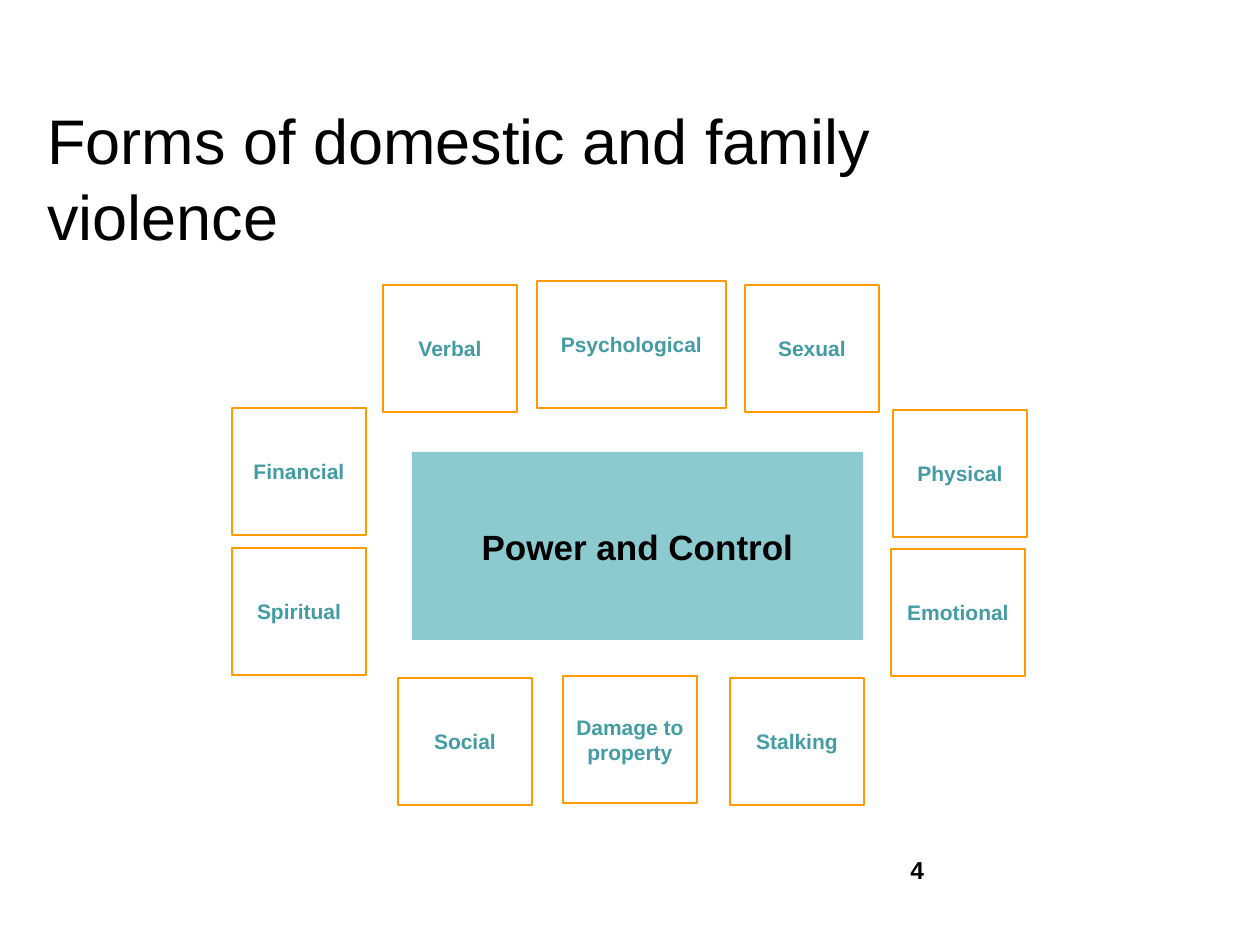
from pptx import Presentation
from pptx.dml.color import RGBColor
from pptx.enum.shapes import MSO_SHAPE as Shape
from pptx.enum.text import MSO_ANCHOR as Anchor, PP_ALIGN as Align
from pptx.util import Emu, Pt

BLACK = RGBColor(0x00, 0x00, 0x00)
TEAL = RGBColor(0x43, 0x9C, 0xA3)
PALE_TEAL = RGBColor(0x8B, 0xCA, 0xCF)
ORANGE = RGBColor(0xFF, 0x99, 0x00)

EMU_PER_PX = 914400 / 126
FORM_WIDTH, FORM_HEIGHT = 134, 127
FORMS = [
    ("Sexual", 745, 285, FORM_WIDTH),
    ("Physical", 893, 410, FORM_WIDTH),
    ("Emotional", 891, 549, FORM_WIDTH),
    ("Psychological", 537, 281, 189),
    ("Stalking", 730, 678, FORM_WIDTH),
    ("Damage to property", 563, 676, FORM_WIDTH),
    ("Social", 398, 678, FORM_WIDTH),
    ("Spiritual", 232, 548, FORM_WIDTH),
    ("Financial", 232, 408, FORM_WIDTH),
    ("Verbal", 383, 285, FORM_WIDTH),
]


def px(*lengths):
    """Turn pixel lengths into EMU."""
    return [Emu(round(length * EMU_PER_PX)) for length in lengths]


class SlideBuilder:
    """Holds the text style and the slide being built."""

    def __init__(self, slide):
        """Keep the slide and its default font format."""
        self.slide = slide
        self.style = {"name": "Arial", "bold": True}

    def set_text(self, shape, text, anchor, align, color, **font):
        """Fill a shape with one styled paragraph."""
        frame = shape.text_frame
        frame.word_wrap = True
        frame.vertical_anchor = anchor
        para = frame.paragraphs[0]
        para.alignment = align
        span = para.add_run()
        span.text = text
        for key, value in {**self.style, **font}.items():
            setattr(span.font, key, value)
        span.font.color.rgb = color

    def label(self, text, place, anchor, **font):
        """Add a left-aligned black text box."""
        box = self.slide.shapes.add_textbox(*px(*place))
        self.set_text(box, text, anchor, Align.LEFT, BLACK, **font)

    def box(self, text, place, color, fill=None, line=None, **font):
        """Add a rectangle with centred text."""
        box = self.slide.shapes.add_shape(Shape.RECTANGLE, *px(*place))
        box.shadow.inherit = False
        if fill is None:
            box.fill.background()
        else:
            box.fill.solid()
            box.fill.fore_color.rgb = fill
        if line is None:
            box.line.fill.background()
        else:
            box.line.color.rgb = line
            box.line.width = Pt(1.5)
        self.set_text(box, text, Anchor.MIDDLE, Align.CENTER, color, **font)


def main():
    """Build the slide and save the deck."""
    deck = Presentation()
    deck.slide_width, deck.slide_height = px(1260, 945)
    page = SlideBuilder(deck.slides.add_slide(deck.slide_layouts[6]))
    page.label("Forms of domestic and family violence", (35, 125, 1071, 105),
               Anchor.MIDDLE, size=Pt(36), bold=False)
    page.label("4", (898, 849, 60, 63), Anchor.TOP, size=Pt(14))
    page.box("Power and Control", (412, 452, 451, 188), BLACK,
             fill=PALE_TEAL, size=Pt(20))
    for name, left, top, width in FORMS:
        page.box(name, (left, top, width, FORM_HEIGHT), TEAL,
                 line=ORANGE, size=Pt(12))
    deck.save("out.pptx")


if __name__ == "__main__":
    main()
